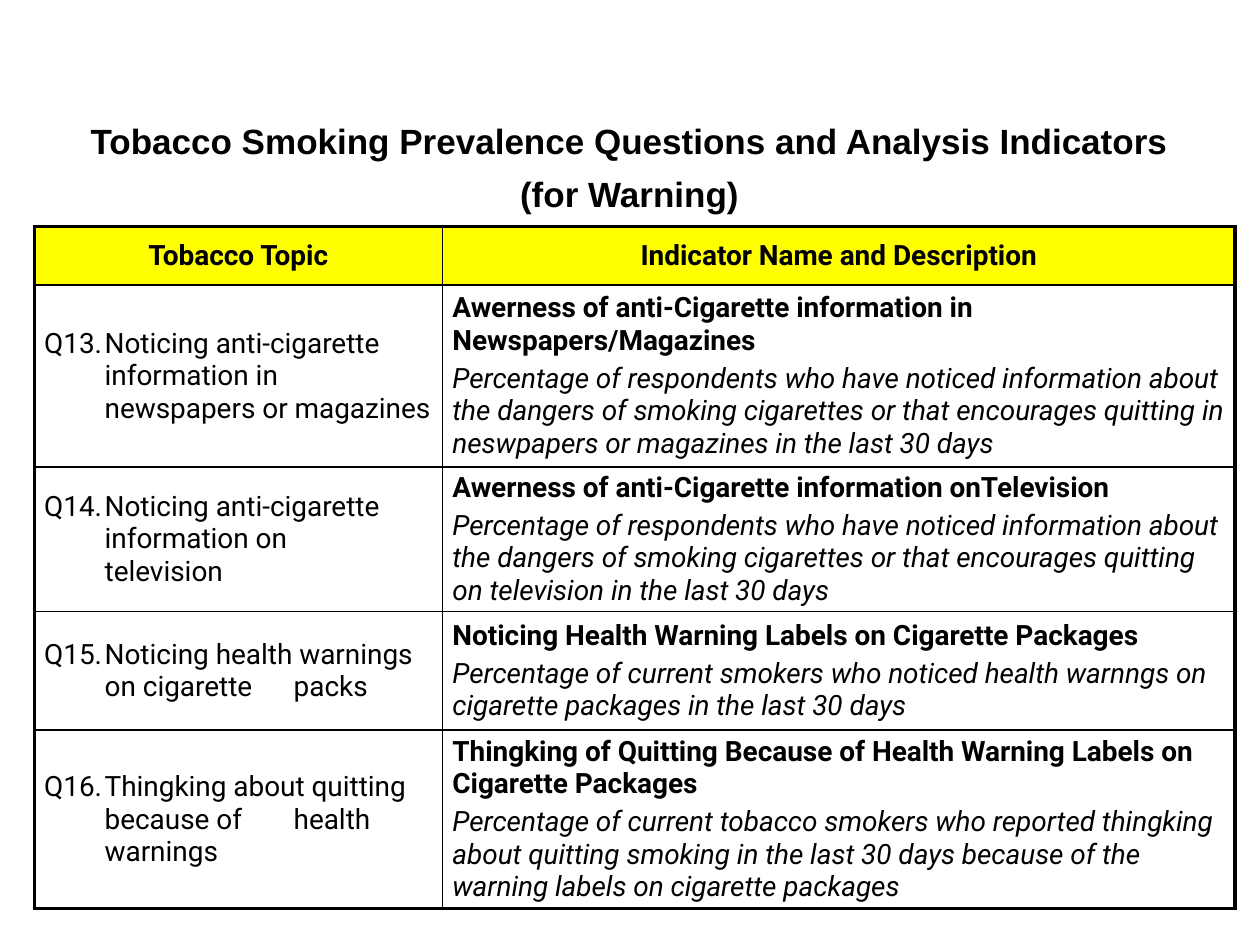
from lxml import etree
from pptx import Presentation
from pptx.dml.color import RGBColor
from pptx.enum.text import MSO_ANCHOR, PP_ALIGN
from pptx.oxml.ns import qn
from pptx.util import Cm, Pt

CENTER, LEFT = PP_ALIGN.CENTER, PP_ALIGN.LEFT
MIDDLE = MSO_ANCHOR.MIDDLE
BLACK = RGBColor(0x00, 0x00, 0x00)
YELLOW = RGBColor(0xFF, 0xFF, 0x00)
THICK, THIN = Pt(2.25), Pt(1)
HANG, TAB = Cm(1.22), Cm(1.24)

TITLE = ["Tobacco Smoking Prevalence Questions and Analysis Indicators", "(for Warning)"]
HEADERS = ["Tobacco Topic", "Indicator Name and Description"]
QUESTIONS = [
    ("Q13.\tNoticing anti-cigarette information in \tnewspapers or magazines",
     "Awerness of anti-Cigarette information in Newspapers/Magazines",
     "Percentage of respondents who have noticed information about the dangers of smoking "
     "cigarettes or that encourages quitting in neswpapers or magazines in the last 30 days"),
    ("Q14.\tNoticing anti-cigarette information on \ttelevision",
     "Awerness of anti-Cigarette information onTelevision",
     "Percentage of respondents who have noticed information about the dangers of smoking "
     "cigarettes or that encourages quitting on television in the last 30 days"),
    ("Q15.\tNoticing health warnings on cigarette \tpacks",
     "Noticing Health Warning Labels on Cigarette Packages",
     "Percentage of current smokers who noticed health warnngs on cigarette packages "
     "in the last 30 days"),
    ("Q16.\tThingking about quitting because of \thealth warnings",
     "Thingking of Quitting Because of Health Warning Labels on Cigarette Packages",
     "Percentage of current tobacco smokers who reported thingking about quitting smoking "
     "in the last 30 days because of the warning labels on cigarette packages"),
]
COL_WIDTHS = [Cm(8.23), Cm(15.98)]
ROW_HEIGHTS = [Cm(1.18), Cm(3.66), Cm(2.92), Cm(2.39), Cm(3.6)]


def add_text(tf, text, first=False, size=16, font="Roboto", bold=False, italic=False,
             align=LEFT, before=3, hanging=False):
    p = tf.paragraphs[0] if first else tf.add_paragraph()
    p.alignment = align
    if not first:
        p.space_before = Pt(before)
    if hanging:
        pPr = p._p.get_or_add_pPr()
        pPr.set("marL", str(HANG))
        pPr.set("indent", str(-HANG))
        tabs = etree.SubElement(pPr, qn("a:tabLst"))
        etree.SubElement(tabs, qn("a:tab"), pos=str(TAB), algn="l")
    r = p.add_run()
    r.text = text
    f = r.font
    f.name, f.size, f.bold, f.italic = font, Pt(size), bold, italic
    f.color.rgb = BLACK


def set_borders(cell, **widths):
    tcPr = cell._tc.get_or_add_tcPr()
    for side in "LRTB":
        ln = etree.SubElement(tcPr, qn("a:ln" + side), w=str(widths[side]))
        fill = etree.SubElement(ln, qn("a:solidFill"))
        etree.SubElement(fill, qn("a:srgbClr"), val=str(BLACK))


def set_margins(o, x, y):
    o.margin_left = o.margin_right = x
    o.margin_top = o.margin_bottom = y


prs = Presentation()
prs.slide_width, prs.slide_height = Cm(25.4), Cm(19.05)
s = prs.slides.add_slide(prs.slide_layouts[6])

sp = s.shapes.add_textbox(Cm(0.69), Cm(2.39), Cm(24), Cm(1.96))
tf = sp.text_frame
tf.word_wrap = True
tf.vertical_anchor = MIDDLE
set_margins(tf, Cm(0.05), Cm(0.03))
for i, line in enumerate(TITLE):
    add_text(tf, line, first=i == 0, size=20, font="Arial", bold=True, align=CENTER, before=6)

n_rows, n_cols = len(ROW_HEIGHTS), len(COL_WIDTHS)
table = s.shapes.add_table(n_rows, n_cols, Cm(0.69), Cm(4.57),
                           sum(COL_WIDTHS), sum(ROW_HEIGHTS)).table
table.first_row = table.horz_banding = False
for col, width in zip(table.columns, COL_WIDTHS):
    col.width = width
for row, height in zip(table.rows, ROW_HEIGHTS):
    row.height = height

for i in range(n_rows):
    for j in range(n_cols):
        cell = table.cell(i, j)
        cell.vertical_anchor = MIDDLE
        set_margins(cell, Cm(0.2), Cm(0.05))
        set_borders(cell,
                    L=THICK if j == 0 else THIN,
                    R=THICK if j == n_cols - 1 else THIN,
                    T=THICK if i == 0 else THIN,
                    B=THICK if i == n_rows - 1 else THIN)
        if i == 0:
            cell.fill.solid()
            cell.fill.fore_color.rgb = YELLOW
            add_text(cell.text_frame, HEADERS[j], first=True, bold=True, align=CENTER)
        else:
            cell.fill.background()

for i, (topic, name, description) in enumerate(QUESTIONS, start=1):
    add_text(table.cell(i, 0).text_frame, topic, first=True, hanging=True)
    tf = table.cell(i, 1).text_frame
    add_text(tf, name, first=True, bold=True)
    add_text(tf, description, italic=True)

prs.save("out.pptx")
